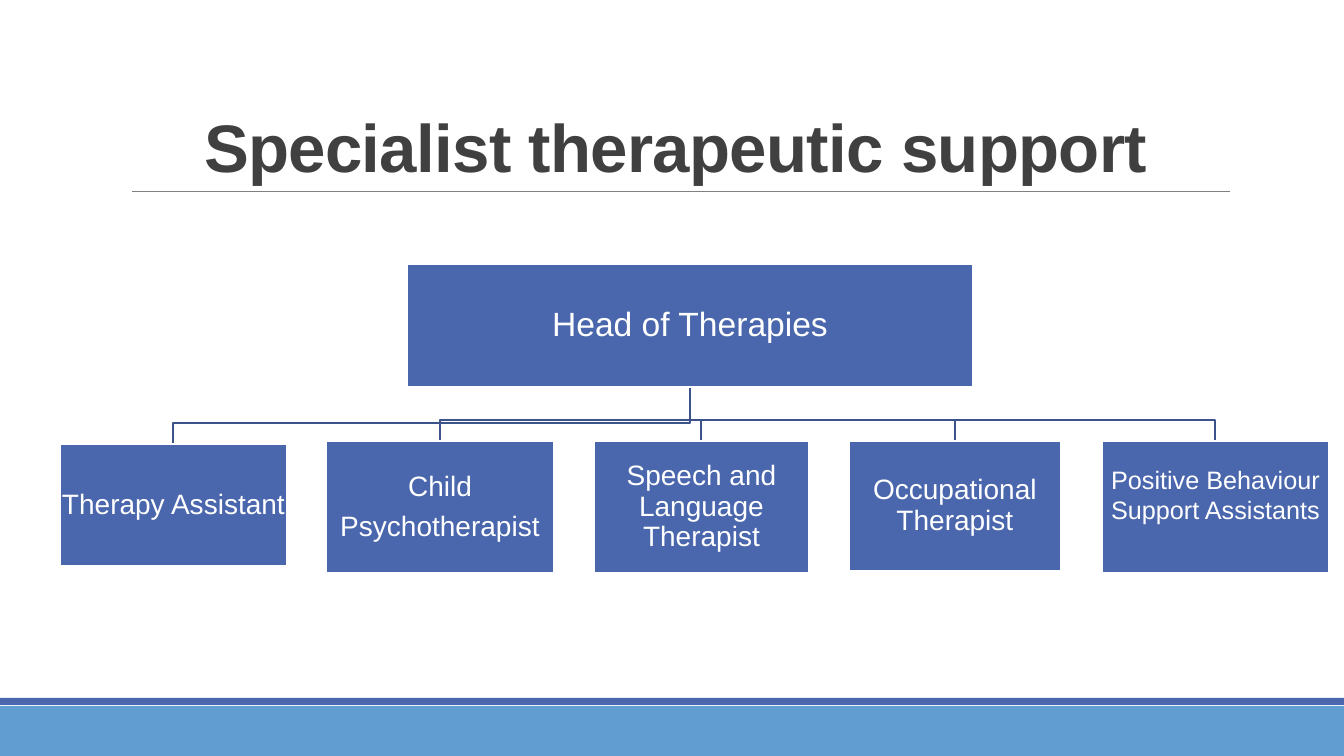
from lxml import etree
from pptx import Presentation
from pptx.dml.color import RGBColor
from pptx.enum.shapes import MSO_CONNECTOR, MSO_SHAPE
from pptx.enum.text import MSO_ANCHOR, MSO_AUTO_SIZE, PP_ALIGN
from pptx.oxml.ns import qn
from pptx.util import Pt

RECTANGLE = MSO_SHAPE.RECTANGLE
STRAIGHT = MSO_CONNECTOR.STRAIGHT
CENTER = PP_ALIGN.CENTER
MIDDLE, BOTTOM = MSO_ANCHOR.MIDDLE, MSO_ANCHOR.BOTTOM
NO_AUTOFIT = MSO_AUTO_SIZE.NONE

SCALE = 914400 / 100.8  # EMU per px
COLORS = {name: RGBColor.from_string(value) for name, value in {
    "box": "4A66AC", "band": "629DD1", "branch": "3B528A",
    "rule": "808080", "title": "404040", "white": "FFFFFF"}.items()}


def px(*lengths):
    return [round(length * SCALE) for length in lengths]


def write_text(shape, text, size, color="white", bold=False, anchor=MIDDLE,
               spacing=0.9, gap=0, insets=(1, 1, 1, 1), tracking=None):
    frame = shape.text_frame
    frame.word_wrap = True
    frame.auto_size = NO_AUTOFIT
    frame.vertical_anchor = anchor
    (frame.margin_left, frame.margin_top,
     frame.margin_right, frame.margin_bottom) = px(*insets)
    frame.text = text
    for index, paragraph in enumerate(frame.paragraphs):
        paragraph.alignment = CENTER
        paragraph.line_spacing = spacing
        paragraph.space_before = Pt(gap if index else 0)
        paragraph.space_after = Pt(0)
        for run in paragraph.runs:
            run.font.name = "Arial"
            run.font.size = Pt(size)
            run.font.bold = bold
            run.font.color.rgb = COLORS[color]
            if tracking is not None:
                run.font._element.set("spc", str(tracking))


presentation = Presentation()
presentation.slide_width, presentation.slide_height = px(1344, 756)
slide = presentation.slides.add_slide(presentation.slide_layouts[5])
shapes = slide.shapes

# Title
title = shapes.title
title.left, title.top, title.width, title.height = px(121, 31, 1109, 160)
write_text(title, "Specialist therapeutic support", 48, color="title", bold=True,
           anchor=BOTTOM, spacing=0.85, insets=(10, 5, 10, 5), tracking=-50)

# Rule under the title
rule = shapes.add_connector(STRAIGHT, *px(132, 191, 1230, 191))
rule.line.color.rgb = COLORS["rule"]
rule.line.width = Pt(0.5)
etree.SubElement(rule._element.spPr, qn("a:effectLst"))

# Footer bands
for color, top, height in [("band", 706, 50), ("box", 698, 7)]:
    band = shapes.add_shape(RECTANGLE, *px(0, top, 1344, height))
    band.shadow.inherit = False
    band.fill.solid()
    band.fill.fore_color.rgb = COLORS[color]
    band.line.fill.background()

# Organisation chart: text, box in px, text format
head = ("Head of Therapies", (407, 264, 566, 123), {"size": 24, "insets": (2, 2, 2, 2)})
team = [
    ("Therapy Assistant", (60, 444, 227, 122), {"size": 20}),
    ("Child\nPsychotherapist", (326, 441, 228, 132), {"size": 20, "gap": 7}),
    ("Speech and Language Therapist", (594, 441, 215, 132), {"size": 20}),
    ("Occupational Therapist", (849, 441, 212, 130), {"size": 20}),
    ("Positive Behaviour Support Assistants", (1102, 441, 227, 132),
     {"size": 18, "spacing": 1, "insets": (1, 1, 1, 26)}),
]

# Branches from the head to each role
left, top, width, height = head[1]
trunk, start = left + width // 2, top + height
for _, (left, top, width, _), _ in reversed(team):
    middle, elbow = left + width // 2, top - 21
    builder = shapes.build_freeform(trunk, start, scale=SCALE)
    builder.add_line_segments([(trunk, elbow), (middle, elbow), (middle, top)], close=False)
    branch = builder.convert_to_shape()
    branch.shadow.inherit = False
    branch.fill.background()
    branch.line.color.rgb = COLORS["branch"]
    branch.line.width = Pt(1.25)

# Boxes
for text, place, text_format in [head, *team]:
    box = shapes.add_shape(RECTANGLE, *px(*place))
    box.shadow.inherit = False
    box.fill.solid()
    box.fill.fore_color.rgb = COLORS["box"]
    box.line.color.rgb = COLORS["white"]
    box.line.width = Pt(1.25)
    write_text(box, text, **text_format)

presentation.save("out.pptx")
